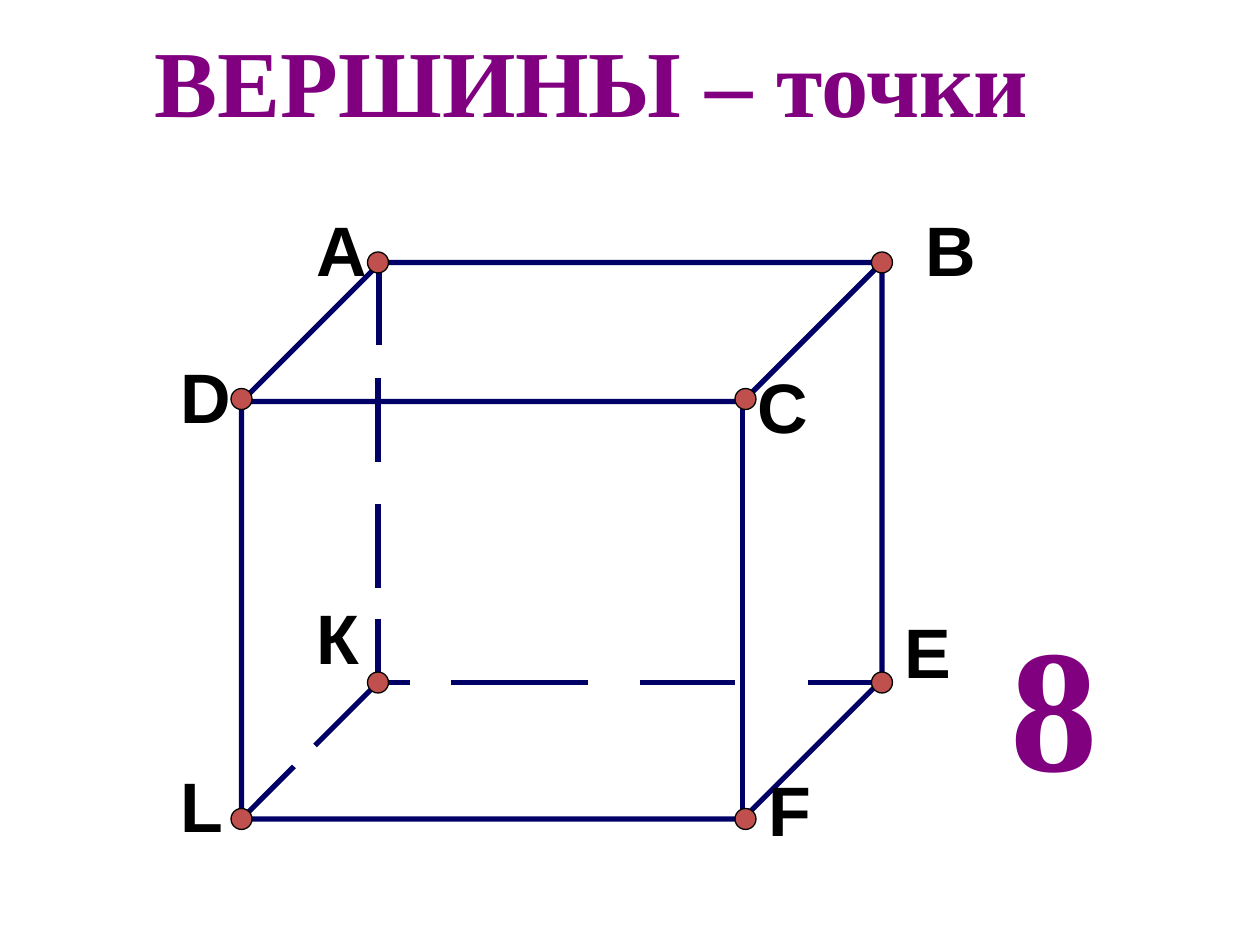
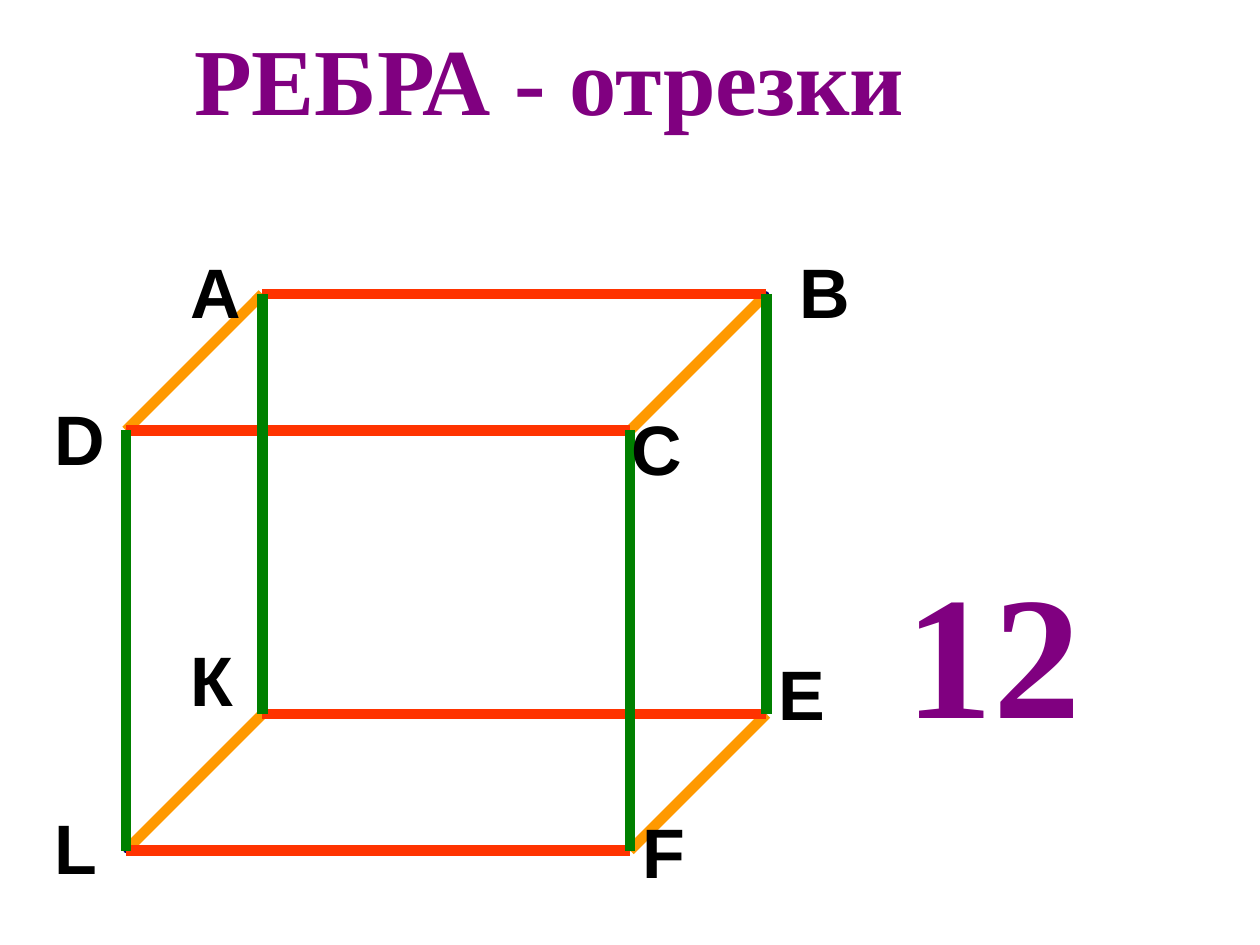
from dataclasses import dataclass
from typing import NamedTuple

from lxml.etree import SubElement
from pptx import Presentation
from pptx.dml.color import RGBColor
from pptx.enum.shapes import MSO_CONNECTOR, MSO_SHAPE
from pptx.enum.text import MSO_ANCHOR, MSO_AUTO_SIZE, PP_ALIGN
from pptx.oxml.ns import qn
from pptx.util import Emu, Inches, Pt


# Theme: every colour, font and size
@dataclass(frozen=True)
class Theme:
    paper: str = "FFFFFF"
    ink: str = "000000"
    heading: str = "800080"
    outline: str = "000066"
    dot: str = "C0504D"
    depth_edge: str = "FF9900"
    width_edge: str = "FF3300"
    height_edge: str = "008000"
    heading_font: str = "Times New Roman"
    label_font: str = "Arial"
    title_size: float = 54
    count_size: float = 100
    label_size: float = 40
    thin: float = 3
    thick: float = 6
    dot_line: float = 0.75


THEME = Theme()

# Grid: 120 columns by 90 rows of square cells
WIDTH, HEIGHT = Inches(10), Inches(7.5)
CELL = WIDTH / 120


class Point(NamedTuple):
    x: float
    y: float

    def shifted(self, by: "Point") -> "Point":
        return Point(self.x + by.x, self.y + by.y)


class Area(NamedTuple):
    left: float
    top: float
    width: float
    height: float


class Label(NamedTuple):
    corner: Point
    width: float = 6


class TextStyle(NamedTuple):
    font: str
    size: float
    color: str
    align: PP_ALIGN
    wrap: bool = True
    fill: str | None = None


@dataclass(frozen=True)
class SolidPage:
    title: str
    title_area: Area
    count: str
    count_area: Area
    origin: Point
    label_shift: Point
    show_dots: bool
    show_edges: bool


TITLE = TextStyle(THEME.heading_font, THEME.title_size, THEME.heading,
                  PP_ALIGN.CENTER, fill=THEME.paper)
COUNT = TextStyle(THEME.heading_font, THEME.count_size, THEME.heading,
                  PP_ALIGN.CENTER, wrap=False, fill=THEME.paper)
LABEL = TextStyle(THEME.label_font, THEME.label_size, THEME.ink, PP_ALIGN.LEFT)

# Box geometry, in cells from the box's top left corner
FRONT_WIDTH, FRONT_HEIGHT, DEPTH = 48, 40, 13
RIGHT, BOTTOM = FRONT_WIDTH + DEPTH, FRONT_HEIGHT + DEPTH
LABEL_HEIGHT, DOT_SIZE = 9.24, 2

VERTICES = {
    "A": Point(DEPTH, 0), "B": Point(RIGHT, 0),
    "C": Point(FRONT_WIDTH, DEPTH), "D": Point(0, DEPTH),
    "К": Point(DEPTH, FRONT_HEIGHT), "E": Point(RIGHT, FRONT_HEIGHT),
    "F": Point(FRONT_WIDTH, BOTTOM), "L": Point(0, BOTTOM),
}
LABELS = {
    "A": Label(Point(6, -6), 13), "B": Label(Point(64, -6), 7),
    "C": Label(Point(48, 9)), "D": Label(Point(-7, 8)),
    "К": Label(Point(6, 31)), "E": Label(Point(62, 32.33)),
    "F": Label(Point(49, 47.33), 8), "L": Label(Point(-7, 47)),
}
HIDDEN_DASHES = (
    [(Point(DEPTH + 0.1, 0.2), Point(DEPTH + 0.1, 7.9))]
    + [(Point(DEPTH, start), Point(DEPTH, end))
       for start, end in ((11, 19), (23, 31), (34, FRONT_HEIGHT))]
    + [(Point(start, FRONT_HEIGHT), Point(end, FRONT_HEIGHT))
       for start, end in ((RIGHT, 54), (47, 38), (33, 20), (16, DEPTH))]
    + [(VERTICES["К"], Point(7, 46)), (VERTICES["L"], Point(5, 48))]
)
EDGES = {
    THEME.depth_edge: ("DA", "CB", "FE", "LК"),
    THEME.width_edge: ("AB", "КE", "LF", "DC"),
    THEME.height_edge: ("BE", "AК", "DL", "CF"),
}

PAGES = (
    SolidPage("ВЕРШИНЫ – точки ", Area(5.16, 1.44, 104.64, 12.12),
              "8", Area(95, 56, 10.8, 21.36),
              Point(23, 25), Point(0, 0), show_dots=True, show_edges=False),
    SolidPage("РЕБРА - отрезки ", Area(2.64, 1.32, 101.64, 12.12),
              "12", Area(85, 51, 19.2, 21.36),
              Point(12, 28), Point(-1, 1), show_dots=False, show_edges=True),
)


def cells(*counts: float) -> list[Emu]:
    return [Emu(round(count * CELL)) for count in counts]


def set_all(target, values: dict) -> None:
    for name, value in values.items():
        setattr(target, name, value)


def add_line(page, start: Point, end: Point, color: str, weight: float) -> None:
    line = page.shapes.add_connector(MSO_CONNECTOR.STRAIGHT, *cells(*start, *end))
    line.line.color.rgb = RGBColor.from_string(color)
    line.line.width = Pt(weight)
    SubElement(line._element.spPr, qn("a:effectLst"))


def add_outlined(page, preset: MSO_SHAPE, area: Area, fill: str | None,
                 color: str, weight: float):
    shape = page.shapes.add_shape(preset, *cells(*area))
    shape.shadow.inherit = False
    if fill:
        shape.fill.solid()
        shape.fill.fore_color.rgb = RGBColor.from_string(fill)
    else:
        shape.fill.background()
    shape.line.color.rgb = RGBColor.from_string(color)
    shape.line.width = Pt(weight)
    return shape


def add_text(page, text: str, area: Area, style: TextStyle) -> None:
    box = page.shapes.add_textbox(*cells(*area))
    if style.fill:
        box.fill.solid()
        box.fill.fore_color.rgb = RGBColor.from_string(style.fill)
    set_all(box.text_frame, {
        "word_wrap": style.wrap,
        "auto_size": MSO_AUTO_SIZE.SHAPE_TO_FIT_TEXT,
        "vertical_anchor": MSO_ANCHOR.BOTTOM,
    })
    para = box.text_frame.paragraphs[0]
    para.alignment = style.align
    span = para.add_run()
    span.text = text
    set_all(span.font, {"name": style.font, "size": Pt(style.size), "bold": True})
    span.font.color.rgb = RGBColor.from_string(style.color)


def add_solid(page, origin: Point) -> None:
    cube = add_outlined(page, MSO_SHAPE.CUBE, Area(*origin, RIGHT, BOTTOM),
                        None, THEME.outline, THEME.thin)
    cube.adjustments[0] = 0.25
    for start, end in HIDDEN_DASHES:
        add_line(page, start.shifted(origin), end.shifted(origin),
                 THEME.outline, THEME.thin)


def add_edges(page, origin: Point) -> None:
    for color, edges in EDGES.items():
        for start, end in edges:
            add_line(page, VERTICES[start].shifted(origin),
                     VERTICES[end].shifted(origin), color, THEME.thick)


def add_labels(page, origin: Point) -> None:
    for letter, label in LABELS.items():
        corner = label.corner.shifted(origin)
        add_text(page, letter, Area(*corner, label.width, LABEL_HEIGHT), LABEL)


def add_dots(page, origin: Point) -> None:
    to_corner = Point(-DOT_SIZE / 2, -DOT_SIZE / 2)
    for vertex in VERTICES.values():
        corner = vertex.shifted(origin).shifted(to_corner)
        add_outlined(page, MSO_SHAPE.FLOWCHART_CONNECTOR,
                     Area(*corner, DOT_SIZE, DOT_SIZE),
                     THEME.dot, THEME.ink, THEME.dot_line)


def build_page(deck, content: SolidPage) -> None:
    page = deck.slides.add_slide(deck.slide_layouts[6])
    page.background.fill.solid()
    page.background.fill.fore_color.rgb = RGBColor.from_string(THEME.paper)

    # The box with its edges, letters and vertices
    add_solid(page, content.origin)
    if content.show_edges:
        add_edges(page, content.origin)
    add_labels(page, content.origin.shifted(content.label_shift))
    if content.show_dots:
        add_dots(page, content.origin)

    # Title and number of elements
    add_text(page, content.title, content.title_area, TITLE)
    add_text(page, content.count, content.count_area, COUNT)


def main() -> None:
    deck = Presentation()
    set_all(deck, {"slide_width": WIDTH, "slide_height": HEIGHT})
    for content in PAGES:
        build_page(deck, content)
    deck.save("out.pptx")


if __name__ == "__main__":
    main()
